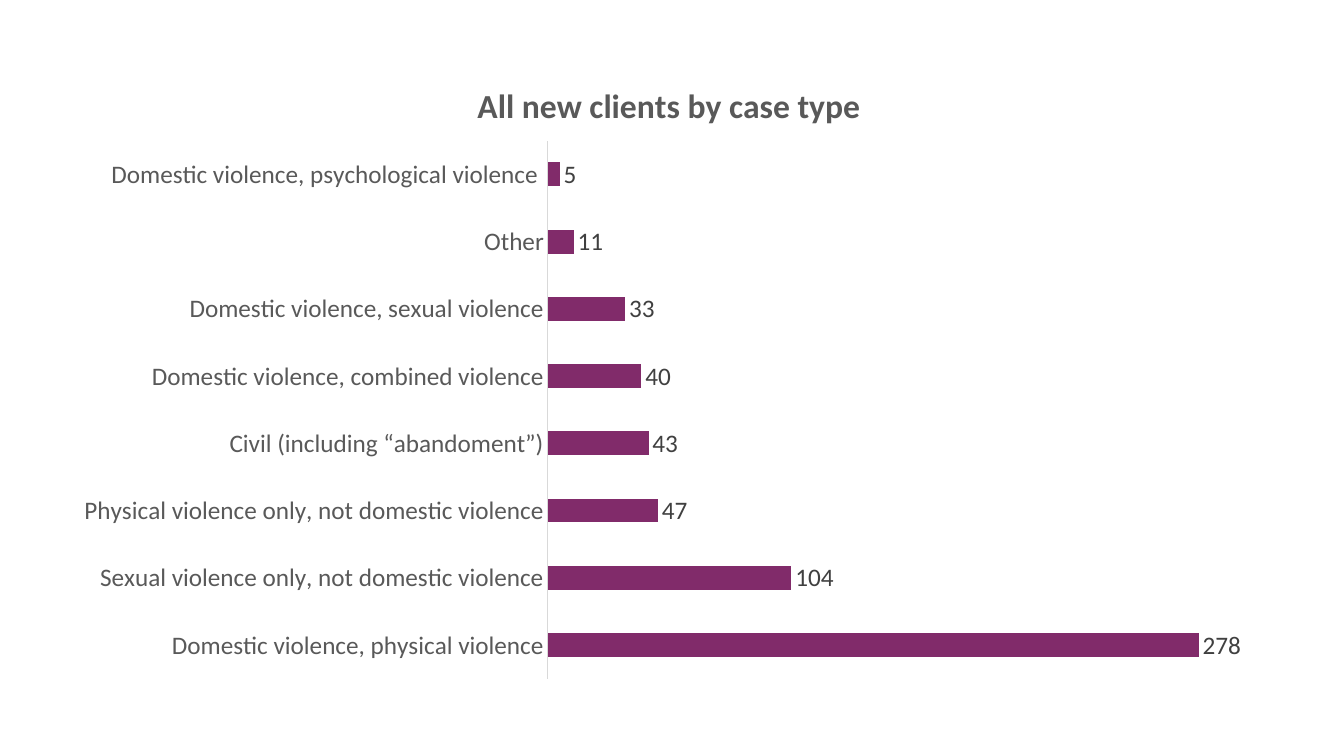
from typing import NamedTuple

from lxml.etree import SubElement
from pptx import Presentation
from pptx.chart.chart import Chart
from pptx.chart.data import CategoryChartData
from pptx.dml.color import RGBColor
from pptx.enum.chart import XL_CHART_TYPE, XL_LABEL_POSITION, XL_TICK_LABEL_POSITION, XL_TICK_MARK
from pptx.oxml.ns import qn
from pptx.text.text import Font
from pptx.util import Inches, Pt

PURPLE = RGBColor(0x81, 0x2B, 0x6A)
TEXT_GREY = RGBColor(0x59, 0x59, 0x59)
LABEL_GREY = RGBColor(0x40, 0x40, 0x40)
AXIS_GREY = RGBColor(0xD9, 0xD9, 0xD9)


class CaseType(NamedTuple):
    name: str
    clients: int


CASE_TYPES = [
    CaseType("Domestic violence, physical violence", 278),
    CaseType("Sexual violence only, not domestic violence", 104),
    CaseType("Physical violence only, not domestic violence", 47),
    CaseType("Civil (including “abandoment”)", 43),
    CaseType("Domestic violence, combined violence", 40),
    CaseType("Domestic violence, sexual violence", 33),
    CaseType("Other", 11),
    CaseType("Domestic violence, psychological violence ", 5),
]


def format_font(font: Font, *, size: float, color: RGBColor, bold: bool = False) -> None:
    font.name = "Calibri"
    font.size = Pt(size)
    font.bold = bold
    font.color.rgb = color


def place_plot(chart: Chart, **fractions: float) -> None:
    """Fix the inner plot area, given x, y, w and h as fractions of the chart."""
    plot_area = chart.plots[0]._element.getparent()
    for automatic in plot_area.findall(qn("c:layout")):
        plot_area.remove(automatic)
    layout = SubElement(plot_area, qn("c:layout"))
    plot_area.insert(0, layout)
    manual = SubElement(layout, qn("c:manualLayout"))
    settings = {"layoutTarget": "inner", "xMode": "edge", "yMode": "edge", **fractions}
    for tag, value in settings.items():
        SubElement(manual, qn(f"c:{tag}")).set("val", str(value))


def format_title(chart: Chart, text: str) -> None:
    chart.has_title = True
    chart.chart_title.include_in_layout = False
    para = chart.chart_title.text_frame.paragraphs[0]
    span = para.add_run()
    span.text = text
    format_font(span.font, size=24, color=TEXT_GREY, bold=True)


def format_axes(chart: Chart) -> None:
    categories = chart.category_axis
    categories.major_tick_mark = XL_TICK_MARK.NONE
    categories.minor_tick_mark = XL_TICK_MARK.NONE
    categories.tick_label_position = XL_TICK_LABEL_POSITION.NEXT_TO_AXIS
    categories.format.line.color.rgb = AXIS_GREY
    categories.format.line.width = Pt(0.75)
    format_font(categories.tick_labels.font, size=18, color=TEXT_GREY)
    values = chart.value_axis
    values.visible = False
    values.has_major_gridlines = False
    values.minimum_scale = 0
    values.maximum_scale = 300


def format_bars(chart: Chart) -> None:
    plot = chart.plots[0]
    plot.gap_width = 182
    plot.vary_by_categories = False
    bars = plot.series[0]
    bars.format.fill.solid()
    bars.format.fill.fore_color.rgb = PURPLE
    labels = bars.data_labels
    labels.show_value = True
    labels.position = XL_LABEL_POSITION.OUTSIDE_END
    format_font(labels.font, size=18, color=LABEL_GREY)


def main() -> None:
    deck = Presentation()
    deck.slide_width, deck.slide_height = Inches(13.33), Inches(7.5)
    page = deck.slides.add_slide(deck.slide_layouts[6])

    data = CategoryChartData()
    data.categories = [case.name for case in CASE_TYPES]
    data.add_series("Series 1", [case.clients for case in CASE_TYPES])
    chart = page.shapes.add_chart(
        XL_CHART_TYPE.BAR_CLUSTERED,
        Inches(0.63), Inches(0.58), Inches(12.01), Inches(6.28), data,
    ).chart
    chart.has_legend = False
    chart.font.name = "Calibri"
    chart.font.size = Pt(10)
    format_title(chart, "All new clients by case type")
    format_axes(chart)
    format_bars(chart)
    place_plot(chart, x=0.4, y=0.13, w=0.58, h=0.85)
    deck.save("out.pptx")


if __name__ == "__main__":
    main()
